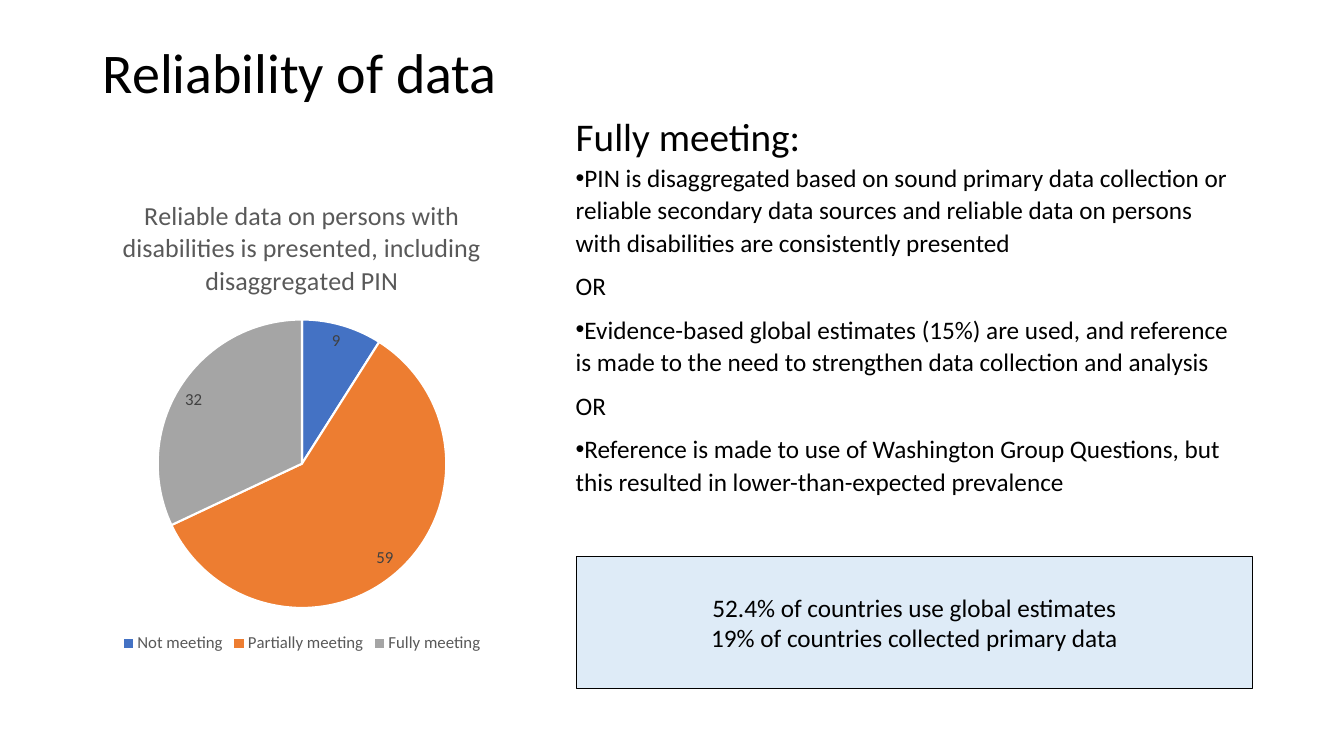
import pptx
import pptx.chart.data
import pptx.dml.color
import pptx.enum.chart
import pptx.enum.shapes
import pptx.enum.text
import pptx.oxml.ns
import pptx.util
from lxml import etree

Inches = pptx.util.Inches
Pt = pptx.util.Pt
RGBColor = pptx.dml.color.RGBColor

FONT = "Calibri"
BLACK = RGBColor(0x00, 0x00, 0x00)
WHITE = RGBColor(0xFF, 0xFF, 0xFF)
GREY_TEXT = RGBColor(0x59, 0x59, 0x59)
LABEL_TEXT = RGBColor(0x40, 0x40, 0x40)
PALE_BLUE = RGBColor(0xDE, 0xEB, 0xF7)
SLICE_COLOURS = [
    RGBColor(0x44, 0x72, 0xC4),
    RGBColor(0xED, 0x7D, 0x31),
    RGBColor(0xA5, 0xA5, 0xA5),
]

CHART_TITLE = ("Reliable data on persons with disabilities is presented, "
               "including disaggregated PIN")
RATINGS = {"Not meeting": 9, "Partially meeting": 59, "Fully meeting": 32}
CRITERIA = [
    "PIN is disaggregated based on sound primary data collection or reliable "
    "secondary data sources and reliable data on persons with disabilities "
    "are consistently presented",
    "Evidence-based global estimates (15%) are used, and reference is made to "
    "the need to strengthen data collection and analysis",
    "Reference is made to use of Washington Group Questions, but this resulted "
    "in lower-than-expected prevalence",
]
FINDINGS = ["52.4% of countries use global estimates",
            "19% of countries collected primary data"]


def set_font(font, size, colour=BLACK):
    font.name = FONT
    font.size = Pt(size)
    font.bold = False
    font.color.rgb = colour


def place(shape, box):
    shape.left, shape.top, shape.width, shape.height = map(Inches, box)


def prepare_frame(frame, anchor):
    frame.word_wrap = True
    frame.auto_size = pptx.enum.text.MSO_AUTO_SIZE.NONE
    frame.vertical_anchor = anchor


def set_bullet(para, bullet, indent):
    """Give the paragraph a bullet character, or none when it is empty."""
    properties = para._p.get_or_add_pPr()
    properties.set("marL", "0")
    properties.set("indent", str(Inches(indent)))
    tag = pptx.oxml.ns.qn("a:buChar" if bullet else "a:buNone")
    element = etree.SubElement(properties, tag)
    if bullet:
        element.set("char", bullet)


def add_title(page, box):
    title = page.shapes.title
    place(title, box)
    prepare_frame(title.text_frame, pptx.enum.text.MSO_ANCHOR.TOP)
    title.text_frame.text = "Reliability of data"
    para = title.text_frame.paragraphs[0]
    para.alignment = pptx.enum.text.PP_ALIGN.LEFT
    para.line_spacing = 0.9
    set_font(para.font, 40)


def add_ratings_pie(page, box):
    data = pptx.chart.data.CategoryChartData()
    data.categories = list(RATINGS)
    data.add_series(CHART_TITLE, list(RATINGS.values()))
    chart = page.shapes.add_chart(
        pptx.enum.chart.XL_CHART_TYPE.PIE, *map(Inches, box), data).chart
    set_font(chart.font, 10)

    # Title and legend
    chart.has_title = True
    chart.chart_title.include_in_layout = False
    chart.chart_title.text_frame.text = CHART_TITLE
    set_font(chart.chart_title.text_frame.paragraphs[0].font, 18.6, GREY_TEXT)
    chart.has_legend = True
    chart.legend.position = pptx.enum.chart.XL_LEGEND_POSITION.BOTTOM
    chart.legend.include_in_layout = False
    set_font(chart.legend.font, 12, GREY_TEXT)

    # Slices and their values
    plot = chart.plots[0]
    plot.vary_by_categories = True
    plot.has_data_labels = True
    labels = plot.data_labels
    labels.show_value = True
    labels.show_percentage = False
    labels.position = pptx.enum.chart.XL_LABEL_POSITION.INSIDE_END
    set_font(labels.font, 12, LABEL_TEXT)
    for index, colour in enumerate(SLICE_COLOURS):
        slice_format = plot.series[0].points[index].format
        slice_format.fill.solid()
        slice_format.fill.fore_color.rgb = colour
        slice_format.line.color.rgb = WHITE
        slice_format.line.width = Pt(1.5)


def add_criteria(page, box):
    body = page.placeholders[1]
    place(body, box)
    frame = body.text_frame
    prepare_frame(frame, pptx.enum.text.MSO_ANCHOR.TOP)

    # Heading
    heading = frame.paragraphs[0]
    heading.text = "Fully meeting:"
    set_bullet(heading, "", 0)
    heading.line_spacing = 0.9
    heading.space_before = Pt(10)
    set_font(heading.font, 28)

    # Alternatives, parted by OR
    lines = [(CRITERIA[0], "•", -0.25)]
    for criterion in CRITERIA[1:]:
        lines += [("OR", "", 0), (criterion, "•", -0.25)]
    for text, bullet, indent in lines:
        para = frame.add_paragraph()
        para.text = text
        set_bullet(para, bullet, indent)
        para.line_spacing = 1.07
        para.space_before = Pt(0)
        para.space_after = Pt(8)
        set_font(para.font, 18)


def add_findings(page, box):
    panel = page.shapes.add_shape(
        pptx.enum.shapes.MSO_SHAPE.RECTANGLE, *map(Inches, box))
    panel.shadow.inherit = False
    panel.fill.solid()
    panel.fill.fore_color.rgb = PALE_BLUE
    panel.line.color.rgb = BLACK
    panel.line.width = Pt(0.75)
    frame = panel.text_frame
    prepare_frame(frame, pptx.enum.text.MSO_ANCHOR.MIDDLE)
    frame.text = "\n".join(FINDINGS)
    for para in frame.paragraphs:
        para.alignment = pptx.enum.text.PP_ALIGN.CENTER
        set_font(para.font, 18)


def main():
    deck = pptx.Presentation()
    deck.slide_width, deck.slide_height = Inches(13.33), Inches(7.5)
    page = deck.slides.add_slide(deck.slide_layouts[1])
    add_title(page, (0.92, 0.4, 11.5, 1.45))
    add_ratings_pie(page, (0.54, 1.76, 4.91, 4.76))
    add_criteria(page, (5.61, 1.12, 6.72, 5.71))
    add_findings(page, (5.72, 5.52, 6.7, 1.31))
    deck.save("out.pptx")


if __name__ == "__main__":
    main()
